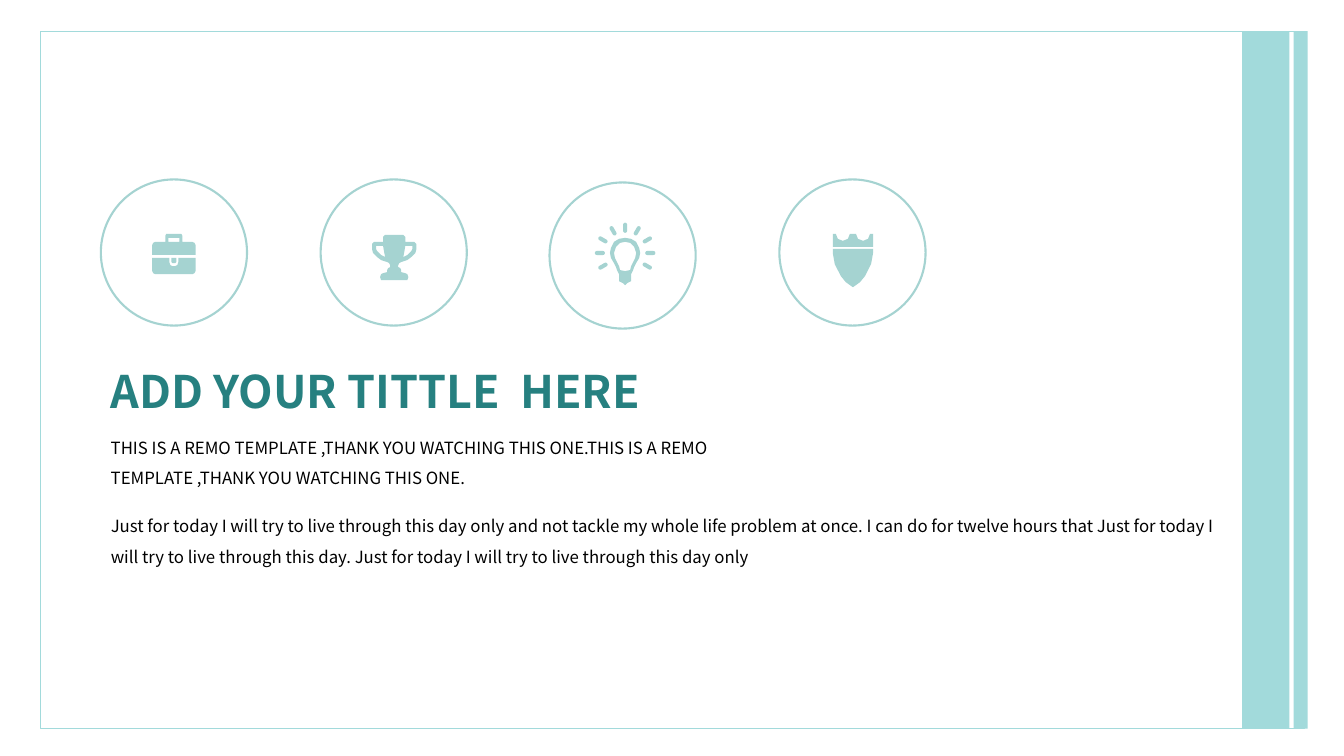
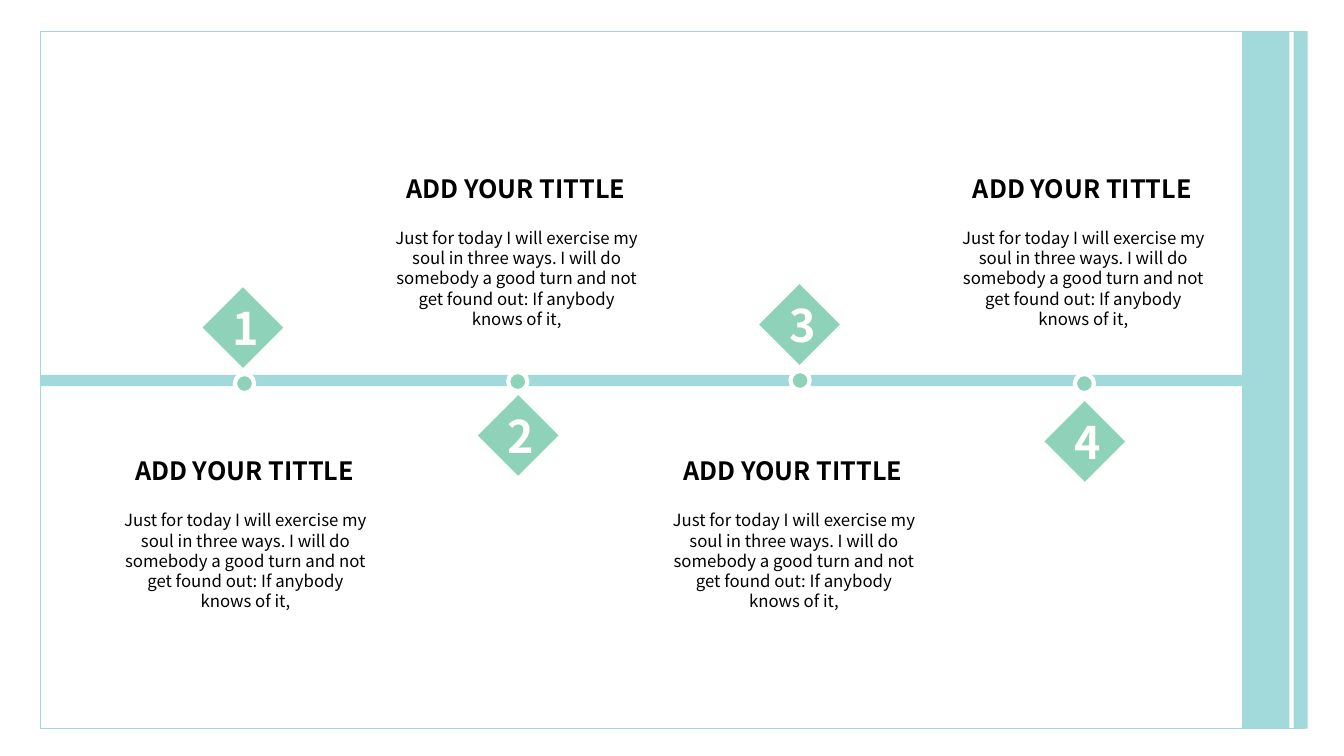
import dataclasses
import math

import pptx
import pptx.dml.color
import pptx.enum.shapes
import pptx.enum.text
import pptx.util

PX = 9144
KIND = pptx.enum.shapes.MSO_SHAPE
ALIGN = pptx.enum.text.PP_ALIGN


@dataclasses.dataclass(frozen=True)
class Theme:
    font: str = "Noto Sans CJK SC"
    band: str = "A2DADB"
    icon: str = "A5D3D1"
    mark: str = "8ED2BA"
    head: str = "268080"
    ink: str = "000000"
    white: str = "FFFFFF"
    big: int = 32
    mid: int = 18
    small: int = 12


def rgb(code):
    return pptx.dml.color.RGBColor.from_string(code)


def px(*sizes):
    return [pptx.util.Emu(size * PX) for size in sizes]


def flip(half, axis):
    return [(2 * axis - x, y) for x, y in reversed(half)]


def whole(half, axis):
    return half + flip(half, axis)


class Deck:
    """Holds the theme, the file and the current slide."""

    def __init__(self, theme):
        self.theme = theme
        self.file = pptx.Presentation()
        self.file.slide_width, self.file.slide_height = px(1333, 750)

    def page(self):
        self.slide = self.file.slides.add_slide(self.file.slide_layouts[6])
        band = self.theme.band
        self.shape(KIND.RECTANGLE, (1283, 31, 14, 692), band)
        self.shape(KIND.RECTANGLE, (1232, 31, 47, 692), band)
        self.shape(KIND.RECTANGLE, (40, 31, 1254, 692), line=band)

    def paint(self, shape, fill=None, line=None, width=1):
        shape.shadow.inherit = False
        if fill:
            shape.fill.solid()
            shape.fill.fore_color.rgb = rgb(fill)
        else:
            shape.fill.background()
        if line:
            shape.line.color.rgb = rgb(line)
            shape.line.width = pptx.util.Pt(width)
        else:
            shape.line.fill.background()
        return shape

    def shape(self, kind, box, fill=None, line=None, width=1):
        shape = self.slide.shapes.add_shape(kind, *px(*box))
        return self.paint(shape, fill, line, width)

    def icon(self, *loops):
        first, *rest = loops
        form = self.slide.shapes.build_freeform(*first[0], scale=PX)
        form.add_line_segments(first[1:], close=True)
        for loop in rest:
            form.move_to(*loop[0])
            form.add_line_segments(loop[1:], close=True)
        self.paint(form.convert_to_shape(), self.theme.icon)

    def label(self, frame, text, size, color, bold=False, align=None, lead=None):
        para = frame.paragraphs[0]
        para.text = text
        para.alignment = align
        para.line_spacing = lead
        font = para.font
        font.name = self.theme.font
        font.size = pptx.util.Pt(size)
        font.bold = bold
        font.color.rgb = rgb(color)

    def text(self, box, text, size, color, inset=(10, 5), **style):
        frame = self.slide.shapes.add_textbox(*px(*box)).text_frame
        frame.word_wrap = True
        frame.auto_size = pptx.enum.text.MSO_AUTO_SIZE.SHAPE_TO_FIT_TEXT
        side, edge = px(*inset)
        frame.margin_left = frame.margin_right = side
        frame.margin_top = frame.margin_bottom = edge
        self.label(frame, text, size, color, **style)

    def badge(self, box, text):
        shape = self.shape(KIND.DIAMOND, box, self.theme.mark)
        frame = shape.text_frame
        frame.vertical_anchor = pptx.enum.text.MSO_ANCHOR.MIDDLE
        self.label(frame, text, self.theme.big, self.theme.white,
                   bold=True, align=ALIGN.CENTER)


def case(deck):
    top = [(151, 253), (151, 243), (152, 241), (154, 240), (164, 240),
           (164, 234), (165, 232)]
    base = [(168, 256), (151, 256), (151, 269), (152, 271), (154, 272),
            (191, 272), (193, 271), (194, 269), (194, 256), (177, 256),
            (177, 260), (176, 263), (174, 264), (171, 264), (169, 263),
            (168, 260)]
    grip = [(167, 240), (178, 240), (178, 236), (167, 236)]
    clasp = [(170, 256), (175, 256), (175, 260), (174, 261), (171, 261),
             (170, 260)]
    deck.icon(whole(top, 172.5), base, grip, clasp)


def trophy(deck):
    cup = [(382, 233), (380, 235), (380, 240), (371, 240), (369, 242),
           (369, 247), (370, 251), (374, 255), (378, 258), (384, 260),
           (386, 261), (387, 263), (387, 265), (385, 266), (384, 268),
           (384, 270), (380, 271), (378, 272), (377, 275), (378, 278)]
    gap = [(373, 244), (380, 244), (381, 250), (382, 255), (378, 253),
           (374, 249), (373, 247)]
    deck.icon(whole(cup, 391), gap, flip(gap, 391))


def bulb(deck):
    glass = [(620, 236), (614, 237), (609, 240), (606, 246), (605, 251),
             (606, 256), (609, 261), (611, 265), (612, 268), (614, 272),
             (614, 279), (618, 281), (620, 283)]
    hole = [(620, 240), (615, 241), (611, 245), (609, 251), (610, 256),
            (612, 260), (614, 264), (615, 268), (620, 269)]
    deck.icon(whole(glass, 620), whole(hole, 620))
    for turn in range(150, 391, 30):
        x = round(620 + 25 * math.cos(math.radians(turn)))
        y = round(251 + 25 * math.sin(math.radians(turn)))
        ray = deck.shape(KIND.ROUNDED_RECTANGLE, (x - 5, y - 2, 10, 4),
                         deck.theme.icon)
        ray.adjustments[0] = 0.5
        ray.rotation = turn % 180


def shield(deck):
    body = [(826, 247), (826, 251), (828, 262), (834, 274), (839, 280),
            (846, 285)]
    crown = [(826, 245), (826, 232), (829, 232), (831, 237), (836, 239),
             (841, 237), (843, 232)]
    deck.icon(whole(body, 846), whole(crown, 846))


def intro(deck):
    theme = deck.theme
    deck.page()
    for draw in (case, trophy, bulb, shield):
        draw(deck)
    for x, y in ((100, 178), (318, 178), (545, 181), (773, 178)):
        deck.shape(KIND.OVAL, (x, y, 145, 145), line=theme.icon, width=1.5)
    deck.text((100, 356, 591, 64), "ADD YOUR TITTLE  HERE",
              theme.big, theme.head, bold=True)
    deck.text((100, 419, 674, 66),
              "THIS IS A REMO TEMPLATE ,THANK YOU WATCHING THIS ONE."
              "THIS IS A REMO TEMPLATE ,THANK YOU WATCHING THIS ONE.",
              theme.small, theme.ink, lead=1.5)
    deck.text((100, 497, 1132, 71),
              "Just for today I will try to live through this day only and "
              "not tackle my whole life problem at once. I can do for twelve "
              "hours that Just for today I will try to live through this day. "
              "Just for today I will try to live through this day only",
              theme.small, theme.ink, lead=1.5)


def steps(deck):
    theme = deck.theme
    body = ("Just for today I will exercise my soul in three ways. I will do "
            "somebody a good turn and not get found out: If anybody knows "
            "of it,")
    stops = [((104, 448), (233, 371), (201, 285)),
             ((373, 168), (504, 369), (474, 392)),
             ((648, 448), (784, 368), (753, 282)),
             ((935, 168), (1066, 371), (1036, 398))]
    style = {"inset": (7, 4), "align": ALIGN.CENTER}
    deck.page()
    deck.shape(KIND.RECTANGLE, (40, 372, 1206, 11), theme.band)
    for num, ((x, y), dot, gem) in enumerate(stops, 1):
        deck.shape(KIND.OVAL, (*dot, 19, 19), theme.mark, theme.white, 3)
        deck.text((x, y, 277, 38), "ADD YOUR TITTLE",
                  theme.mid, theme.ink, bold=True, **style)
        deck.text((x + 9, y + 54, 261, 109), body,
                  theme.small, theme.ink, **style)
        deck.badge((*gem, 80, 80), str(num))


def main():
    deck = Deck(Theme())
    intro(deck)
    steps(deck)
    deck.file.save("out.pptx")


if __name__ == "__main__":
    main()
